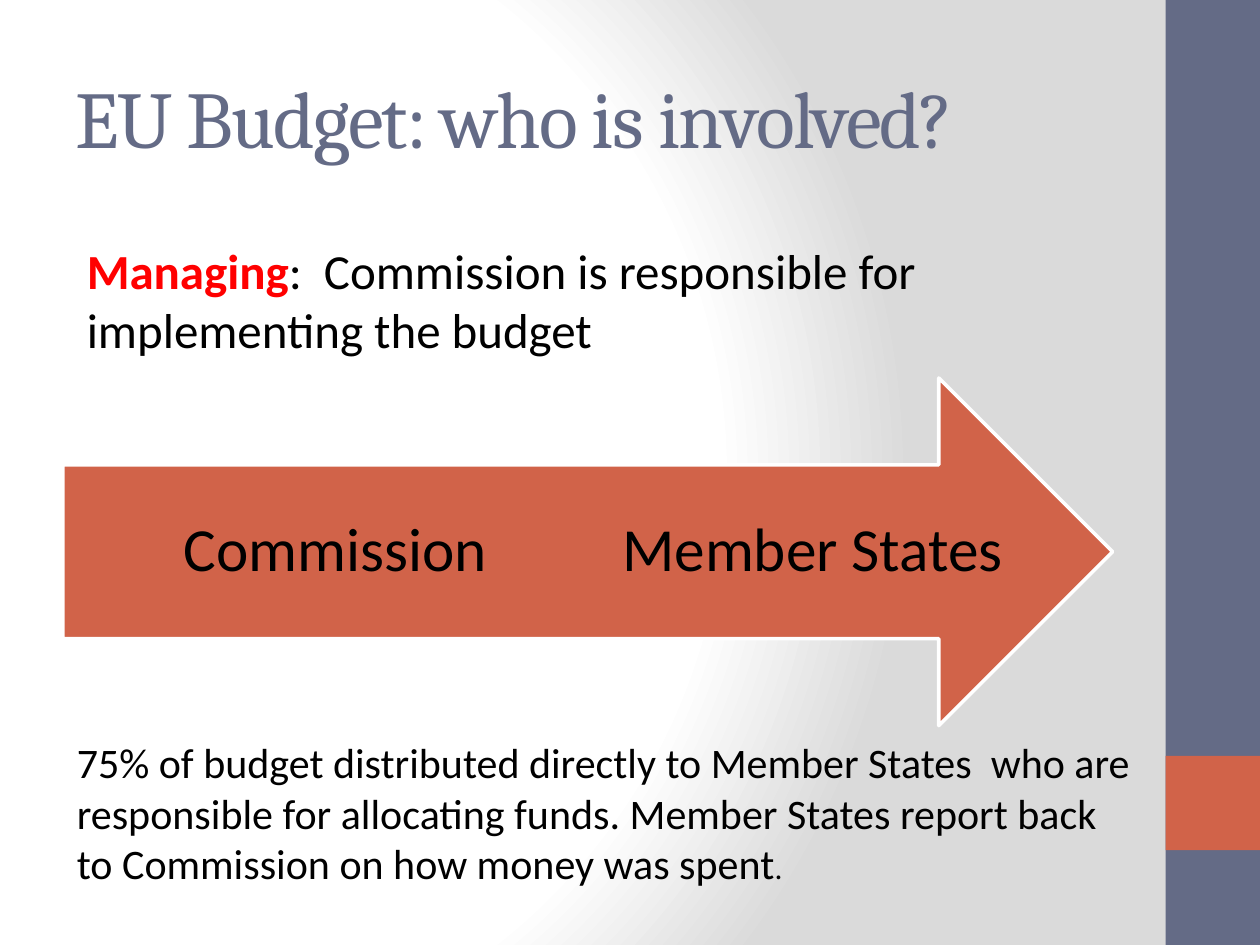
import pptx
import pptx.dml.color
import pptx.enum.shapes
import pptx.enum.text
import pptx.oxml
import pptx.oxml.ns
import pptx.util

Cm = pptx.util.Cm
Pt = pptx.util.Pt
RGB = pptx.dml.color.RGBColor
Kind = pptx.enum.shapes.MSO_SHAPE
Align = pptx.enum.text.PP_ALIGN
Fit = pptx.enum.text.MSO_AUTO_SIZE
Mid = pptx.enum.text.MSO_ANCHOR.MIDDLE

SLATE = RGB(0x64, 0x6B, 0x86)
RUST = RGB(0xD1, 0x63, 0x49)
RED = RGB(0xFF, 0, 0)
BLACK = RGB(0, 0, 0)
WHITE = RGB(0xFF, 0xFF, 0xFF)
GREY = RGB(0xDA, 0xDA, 0xDA)


def apply(item, form):
    for key, val in form.items():
        setattr(item, key, val)


class Deck:
    head = {"name": "Cambria", "size": Pt(46)}
    body = {"name": "Calibri", "bold": False}

    def __init__(self, wide, high):
        self.show = pptx.Presentation()
        apply(self.show, {"slide_width": Cm(wide), "slide_height": Cm(high)})
        self.slide = self.show.slides.add_slide(self.show.slide_layouts[5])

    def glow(self, stops):
        self.slide.background.fill.solid()
        back = self.slide.element.find(".//" + pptx.oxml.ns.qn("p:bgPr"))
        marks = "".join(
            f'<a:gs pos="{pos * 1000}"><a:srgbClr val="{tone}"/></a:gs>'
            for pos, tone in stops)
        grad = pptx.oxml.parse_xml(
            f'<a:gradFill {pptx.oxml.ns.nsdecls("a")} rotWithShape="1">'
            f'<a:gsLst>{marks}</a:gsLst><a:path path="circle">'
            '<a:fillToRect l="20000" t="50000" r="100000" b="50000"/>'
            '</a:path></a:gradFill>')
        back.replace(back[0], grad)

    def span(self, par, text, tone, form):
        run = par.add_run()
        run.text = text
        apply(run.font, form)
        run.font.color.rgb = tone
        return run

    def title(self, text, box):
        hold = self.slide.shapes.title
        apply(hold, dict(zip(("left", "top", "width", "height"), map(Cm, box))))
        apply(hold.text_frame, {"vertical_anchor": Mid, "auto_size": Fit.NONE})
        par = hold.text_frame.paragraphs[0]
        par.alignment = Align.LEFT
        run = self.span(par, text, SLATE, self.head)
        run.font._element.set("spc", "-100")

    def shape(self, kind, box, tone, edge=None):
        form = self.slide.shapes.add_shape(kind, *map(Cm, box))
        form.shadow.inherit = False
        form.fill.solid()
        form.fill.fore_color.rgb = tone
        if edge is None:
            form.line.fill.background()
        else:
            form.line.color.rgb = edge
            form.line.width = Pt(2)

    def text(self, box, lines, size, frame, para):
        area = self.slide.shapes.add_textbox(*map(Cm, box)).text_frame
        apply(area, frame)
        for num, line in enumerate(lines):
            par = area.add_paragraph() if num else area.paragraphs[0]
            apply(par, para)
            for text, tone, more in line:
                self.span(par, text, tone,
                          {**self.body, "size": Pt(size), **more})

    def label(self, box, text):
        self.text(box, [[(text, BLACK, {})]], 35,
                  {"word_wrap": True, "vertical_anchor": Mid,
                   "margin_left": 0, "margin_right": 0,
                   "margin_top": Cm(1), "margin_bottom": Cm(1)},
                  {"alignment": Align.CENTER, "line_spacing": 0.9})

    def note(self, box, lines, size):
        self.text(box, lines, size,
                  {"word_wrap": False, "auto_size": Fit.SHAPE_TO_FIT_TEXT},
                  {"alignment": Align.LEFT})


def main():
    deck = Deck(25.4, 19.05)
    deck.glow([(0, WHITE), (75, WHITE), (100, GREY)])
    for top, high, tone in ((0, 19.05, SLATE), (15.24, 1.9, RUST)):
        deck.shape(Kind.RECTANGLE, (23.5, top, 1.9, high), tone)
    deck.title("EU Budget: who is involved?", (1.27, 0.76, 21.16, 3.18))
    deck.shape(Kind.RIGHT_ARROW, (1.27, 7.62, 21.16, 7.01), RUST, WHITE)
    for left, name in ((12.45, "Member States "), (2.97, "Commission ")):
        deck.label((left, 9.37, 7.87, 3.51), name)
    deck.note((1.5, 4.72, 17.53, 2.64), [
        [("Managing", RED, {"bold": True}),
         (":  Commission is responsible for", BLACK, {})],
        [("implementing the budget", BLACK, {})],
    ], 28)
    deck.note((1.3, 14.73, 22.12, 3.33), [
        [("75% of budget distributed directly to Member States  who are",
          BLACK, {})],
        [("responsible for allocating funds. Member States report back",
          BLACK, {})],
        [("to Commission on how money was spent", BLACK, {}),
         (".", BLACK, {"size": Pt(18)})],
    ], 24)
    deck.show.save("out.pptx")


if __name__ == "__main__":
    main()
